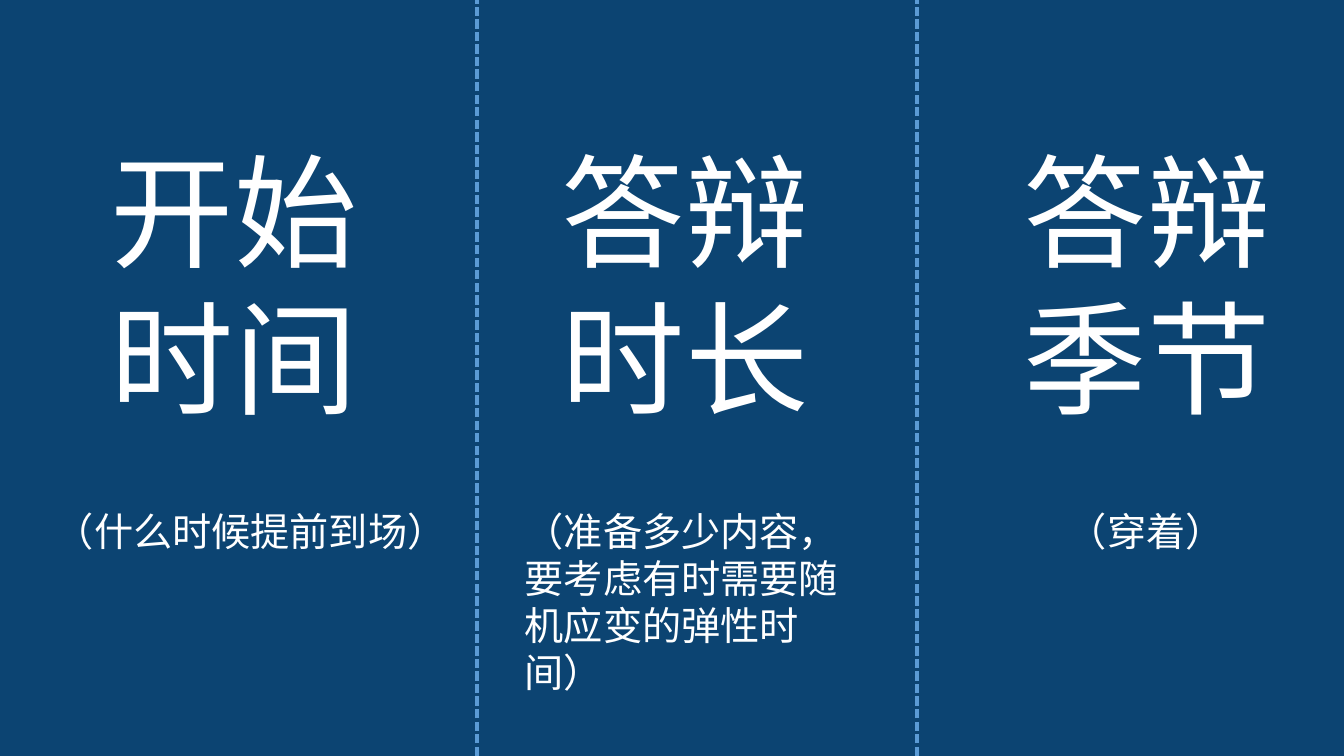
from lxml.etree import SubElement
from pptx import Presentation
from pptx.dml.color import RGBColor
from pptx.enum.dml import MSO_LINE_DASH_STYLE as DASH
from pptx.enum.shapes import MSO_CONNECTOR as CONNECTOR
from pptx.enum.text import MSO_AUTO_SIZE as AUTO_SIZE
from pptx.oxml.ns import qn
from pptx.util import Pt

NAVY = RGBColor(0x0C, 0x44, 0x72)
SKY = RGBColor(0x5B, 0x9B, 0xD5)
WHITE = RGBColor(0xFF, 0xFF, 0xFF)
FONT = "Noto Sans CJK JP"
WIDTH, HEIGHT = 1344, 756
EMU_PER_PX = 12192000 / WIDTH
HEADING_TOP, HEADING_WIDTH, HEADING_HEIGHT = 130, 269, 308
CAPTION_TOP = 502
DIVIDERS = (477, 917)
COLUMNS = (
    (101, "开始\n时间", (45, 416, 57), "（什么时候提前到场）", False),
    (552, "答辩\n时长", (515, 364, 153),
     "（准备多少内容，要考虑有时需要随机应变的弹性时间）", True),
    (1014, "答辩\n季节", (1058, 178, 57), "（穿着）", False),
)


def px(length):
    """Turn pixels into EMU."""
    return round(length * EMU_PER_PX)


def add_text(slide, box, text, size, wrap=False):
    """Add a white text box, one paragraph for each line of text."""
    shape = slide.shapes.add_textbox(*map(px, box))
    text_frame = shape.text_frame
    text_frame.text = text
    text_frame.word_wrap = wrap
    text_frame.auto_size = AUTO_SIZE.SHAPE_TO_FIT_TEXT
    for paragraph in text_frame.paragraphs:
        for run in paragraph.runs:
            run.font.size = Pt(size)
            run.font.color.rgb = WHITE
            run.font.name = FONT
            SubElement(run._r.get_or_add_rPr(), qn("a:ea"), typeface=FONT)


def add_divider(slide, x):
    """Add a dashed vertical line over the full slide height."""
    divider = slide.shapes.add_connector(
        CONNECTOR.STRAIGHT, px(x), px(HEIGHT), px(x), 0)
    divider.line.color.rgb = SKY
    divider.line.width = Pt(2.25)
    divider.line.dash_style = DASH.SQUARE_DOT
    SubElement(divider._element.spPr, qn("a:effectLst"))


def main():
    """Build and save the slide."""
    presentation = Presentation()
    presentation.slide_width = px(WIDTH)
    presentation.slide_height = px(HEIGHT)
    slide = presentation.slides.add_slide(presentation.slide_layouts[6])
    slide.background.fill.solid()
    slide.background.fill.fore_color.rgb = NAVY
    for x in DIVIDERS:
        add_divider(slide, x)
    for heading_left, heading, caption_box, caption, wrap in COLUMNS:
        left, width, height = caption_box
        add_text(slide, (heading_left, HEADING_TOP, HEADING_WIDTH,
                         HEADING_HEIGHT), heading, 88)
        add_text(slide, (left, CAPTION_TOP, width, height), caption, 28, wrap)
    presentation.save("out.pptx")


if __name__ == "__main__":
    main()
